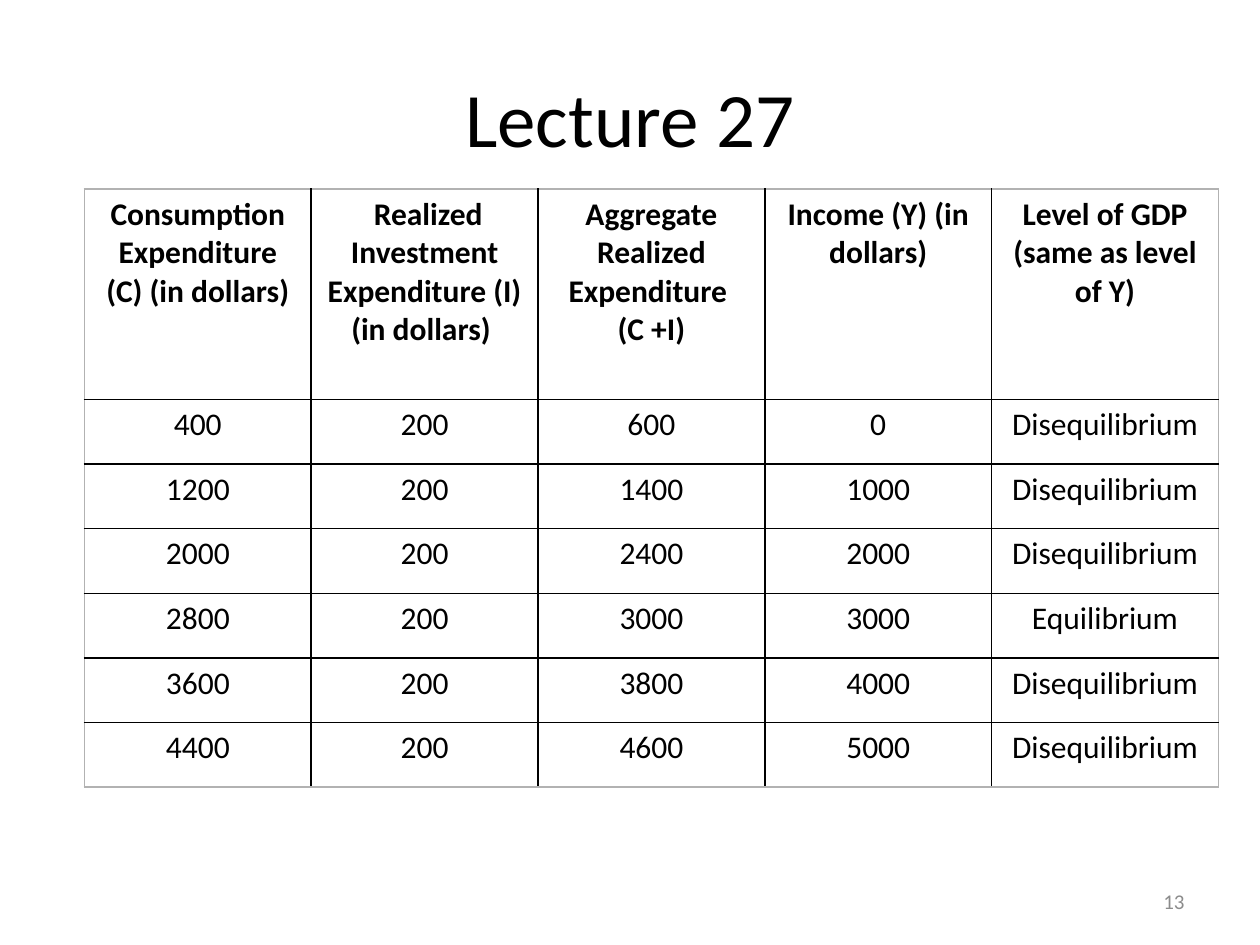
from lxml import etree
from pptx import Presentation
from pptx import util as u
from pptx.dml.color import RGBColor
from pptx.enum import text
from pptx.oxml.ns import qn

TITLE = "Lecture 27"
PAGE = "13"
HEADER = (
    "Consumption Expenditure (C) (in dollars)",
    " Realized Investment Expenditure (I) (in dollars) ",
    "Aggregate Realized Expenditure \n(C +I)",
    "Income (Y) (in dollars)",
    "Level of GDP (same as level of Y)",
)
ROWS = (
    (400, 200, 600, 0, "Disequilibrium"),
    (1200, 200, 1400, 1000, "Disequilibrium"),
    (2000, 200, 2400, 2000, "Disequilibrium"),
    (2800, 200, 3000, 3000, "Equilibrium"),
    (3600, 200, 3800, 4000, "Disequilibrium"),
    (4400, 200, 4600, 5000, "Disequilibrium"),
)
BLACK, GREY, EDGE, WHITE = "000000", "8C8C8C", "B2B2B2", "FFFFFF"
LEFT, TOP, WIDTH, HEIGHT, HEAD_HEIGHT = 0.67, 1.5, 9, 4.75, 1.67


def rgb(value):
    return RGBColor.from_string(value)


def write(tf, content, size, align, color=BLACK, bold=False):
    tf.text = content
    tf.word_wrap = True
    for p in tf.paragraphs:
        p.alignment = align
        p.font.name = "Calibri"
        p.font.size = u.Pt(size)
        p.font.bold = bold
        p.font.color.rgb = rgb(color)


def set_borders(cell, colors):
    props = cell._tc.get_or_add_tcPr()
    for i, (side, color) in enumerate(zip("LRTB", colors)):
        ln = etree.Element(qn(f"a:ln{side}"), w=str(u.Pt(1)))
        fill = etree.SubElement(ln, qn("a:solidFill"))
        etree.SubElement(fill, qn("a:srgbClr"), val=color)
        props.insert(i, ln)


def add_grid(slide):
    data = (HEADER,) + ROWS
    n_rows, n_cols = len(data), len(HEADER)
    box = [u.Inches(v) for v in (LEFT, TOP, WIDTH, HEIGHT)]
    table = slide.shapes.add_table(n_rows, n_cols, *box).table
    table.first_row = table.horz_banding = False
    for r, values in enumerate(data):
        height = (HEIGHT - HEAD_HEIGHT) / len(ROWS) if r else HEAD_HEIGHT
        table.rows[r].height = u.Inches(height)
        for c, value in enumerate(values):
            cell = table.cell(r, c)
            write(cell.text_frame, str(value), 18, text.PP_ALIGN.CENTER, bold=r == 0)
            cell.fill.solid()
            cell.fill.fore_color.rgb = rgb(WHITE)
            outer = (c == 0, c == n_cols - 1, r == 0, r == n_rows - 1)
            set_borders(cell, [EDGE if edge else BLACK for edge in outer])


def main():
    """Build the lecture slide with its expenditure table."""
    prs = Presentation()
    prs.slide_width, prs.slide_height = u.Inches(10), u.Inches(7.5)
    slide = prs.slides.add_slide(prs.slide_layouts[5])
    title = slide.shapes.title
    title.left, title.top = u.Inches(0.5), u.Inches(0.3)
    title.width, title.height = u.Inches(9), u.Inches(1.25)
    write(title.text_frame, TITLE, 44, text.PP_ALIGN.CENTER)
    title.text_frame.vertical_anchor = text.MSO_ANCHOR.MIDDLE
    add_grid(slide)
    sp = slide.shapes.add_textbox(*[u.Inches(v) for v in (7.17, 6.95, 2.33, 0.4)])
    write(sp.text_frame, PAGE, 12, text.PP_ALIGN.RIGHT, GREY)
    sp.text_frame.vertical_anchor = text.MSO_ANCHOR.MIDDLE
    prs.save("out.pptx")


if __name__ == "__main__":
    main()
